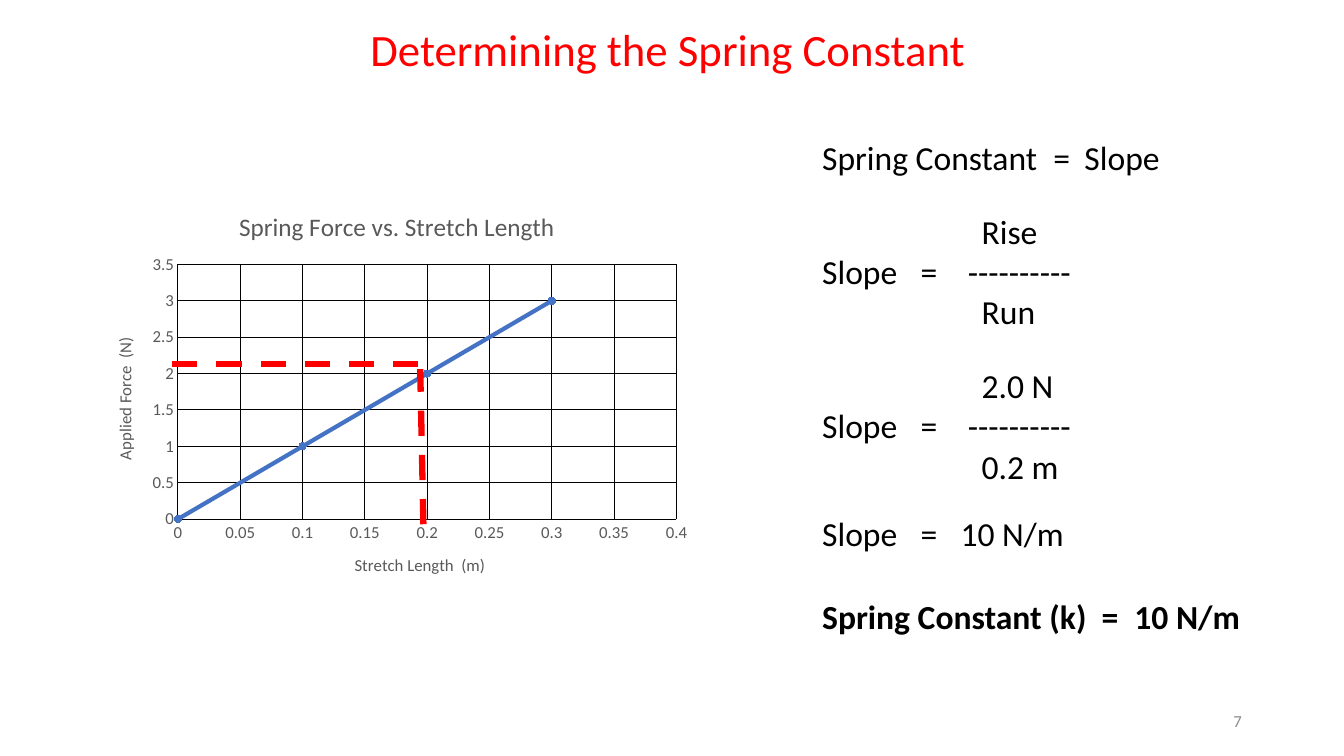
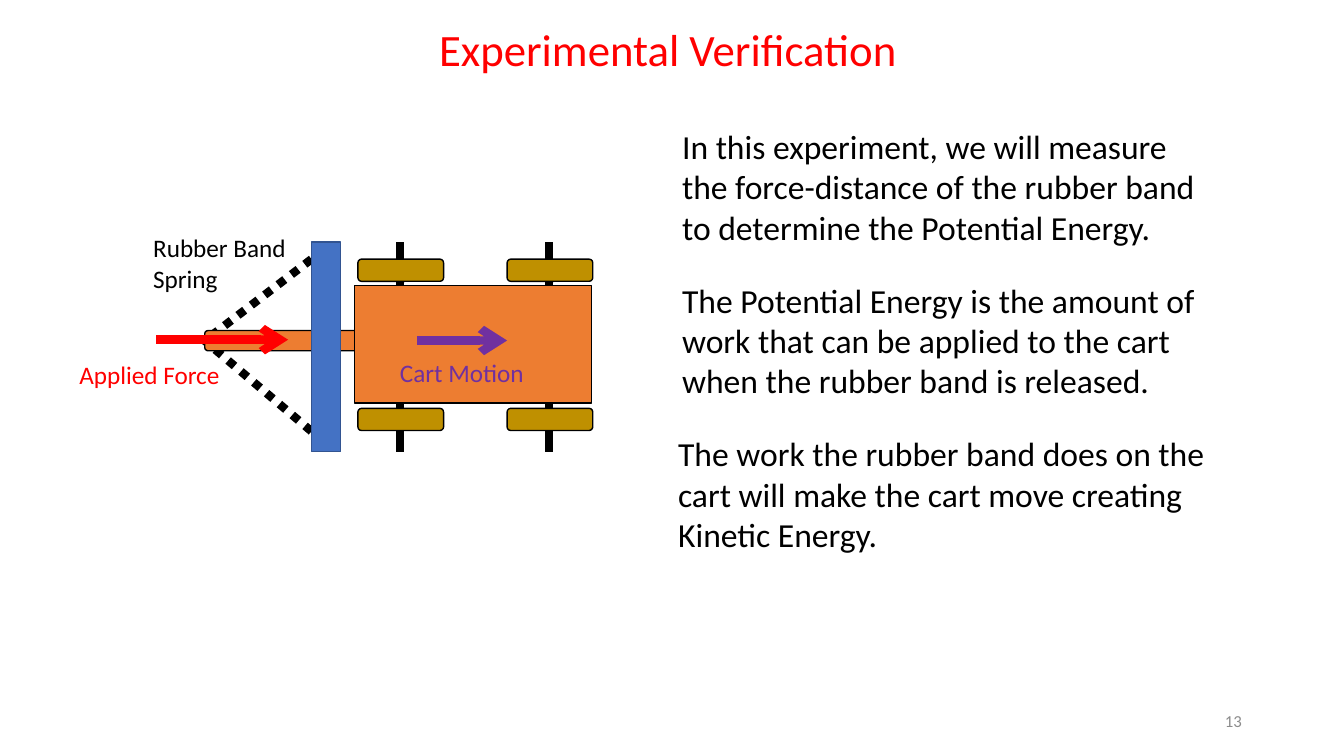
from dataclasses import dataclass

from lxml import etree
from pptx import Presentation
from pptx import util as u
from pptx.chart.data import XyChartData
from pptx.dml.color import RGBColor
from pptx.enum import chart as charts, dml, shapes, text
from pptx.oxml import ns


@dataclass(frozen=True)
class Theme:
    font: str = "Calibri"
    black: str = "000000"
    red: str = "FF0000"
    purple: str = "7030A0"
    blue: str = "4472C4"
    navy: str = "325491"
    orange: str = "ED7D31"
    gold: str = "BF9000"
    gray: str = "8C8C8C"
    axis: str = "595959"
    title: int = 32
    body: int = 24
    label: int = 18
    small: int = 12


T = Theme()


def assign(obj, values):
    for name, value in values.items():
        setattr(obj, name, value)


def style_font(font, size, color, bold=False):
    assign(font, {"name": T.font, "size": u.Pt(size), "bold": bold})
    font.color.rgb = RGBColor.from_string(color)


def style_line(line, color, width):
    line.color.rgb = RGBColor.from_string(color)
    line.width = u.Pt(width)


def style_fill(fill, color):
    fill.solid()
    fill.fore_color.rgb = RGBColor.from_string(color)


def sub(parent, tag, **attributes):
    return etree.SubElement(parent, ns.qn(tag), attributes)


class Deck:
    def __init__(self):
        self.prs = Presentation()
        assign(self.prs, {"slide_width": u.Cm(33.87), "slide_height": u.Cm(19.05)})
        self.s = None

    def slide(self, title, number):
        self.s = self.prs.slides.add_slide(self.prs.slide_layouts[6])
        self.text((8.53, 0.43, 16.61, 1.63), [title], T.title, T.red,
                  align=text.PP_ALIGN.CENTER)
        self.text((23.93, 17.65, 7.62, 1.02), [number], T.small, T.gray,
                  align=text.PP_ALIGN.RIGHT, anchor=text.MSO_ANCHOR.MIDDLE)

    def text(self, box, lines, size=T.body, color=T.black, bold=False,
             align=text.PP_ALIGN.LEFT, anchor=text.MSO_ANCHOR.TOP, tabs=(), indents=()):
        tf = self.s.shapes.add_textbox(*map(u.Cm, box)).text_frame
        assign(tf, {"word_wrap": True, "vertical_anchor": anchor,
                    "auto_size": text.MSO_AUTO_SIZE.SHAPE_TO_FIT_TEXT})
        for i, line in enumerate(lines):
            p = tf.add_paragraph() if i else tf.paragraphs[0]
            p.alignment = align
            pPr = p._p.get_or_add_pPr()
            if indents:
                pPr.set("marL", str(u.Cm(indents[i])))
            if tabs:
                stops = sub(pPr, "a:tabLst")
                for stop in tabs:
                    sub(stops, "a:tab", pos=str(u.Cm(stop)), algn="l")
            r = p.add_run()
            r.text = line
            style_font(r.font, size, color, bold)

    def fraction(self, top, upper, lower):
        self.text((20.47, top, 7.57, 3.33), [upper, "Slope\t=\t----------", lower],
                  tabs=(2.48, 3.67), indents=(4.02, 0, 4.02))

    def shape(self, kind, box, fill, line=T.black):
        sp = self.s.shapes.add_shape(kind, *map(u.Cm, box))
        sp.shadow.inherit = False
        style_fill(sp.fill, fill)
        style_line(sp.line, line, 1)
        return sp

    def line(self, start, end, color, width, dash=None, arrow=False):
        c = self.s.shapes.add_connector(shapes.MSO_CONNECTOR.STRAIGHT,
                                        *map(u.Cm, start + end))
        style_line(c.line, color, width)
        if dash:
            c.line.dash_style = dash
        if arrow:
            sub(c.line._get_or_add_ln(), "a:tailEnd", type="arrow")
        sub(c._element.spPr, "a:effectLst")
        return c

    def axis(self, axis, title, top, step):
        assign(axis, {"minimum_scale": 0, "maximum_scale": top, "major_unit": step,
                      "has_major_gridlines": True,
                      "major_tick_mark": charts.XL_TICK_MARK.NONE,
                      "minor_tick_mark": charts.XL_TICK_MARK.NONE})
        style_font(axis.tick_labels.font, T.small, T.axis)
        for line in (axis.format.line, axis.major_gridlines.format.line):
            style_line(line, T.black, 0.75)
        self.heading(axis.axis_title, title, T.small)

    def heading(self, holder, title, size):
        r = holder.text_frame.paragraphs[0].add_run()
        r.text = title
        style_font(r.font, size, T.axis)

    def scatter(self, box, title, points, x_axis, y_axis, layout):
        data = XyChartData()
        series = data.add_series("Series 1")
        for point in points:
            series.add_data_point(*point)
        chart = self.s.shapes.add_chart(charts.XL_CHART_TYPE.XY_SCATTER_LINES,
                                        *map(u.Cm, box), data).chart
        assign(chart, {"has_legend": False, "has_title": True})
        style_font(chart.font, 10, T.black)
        self.heading(chart.chart_title, title, T.label)
        self.axis(chart.category_axis, *x_axis)
        self.axis(chart.value_axis, *y_axis)
        plot = chart.plots[0]
        plot.vary_by_categories = False
        ser = plot.series[0]
        ser.smooth = False
        style_line(ser.format.line, T.blue, 3)
        assign(ser.marker, {"style": charts.XL_MARKER_STYLE.CIRCLE, "size": 5})
        style_fill(ser.marker.format.fill, T.blue)
        style_line(ser.marker.format.line, T.blue, 0.75)
        area = chart._chartSpace.chart.plotArea
        for old in area.findall(ns.qn("c:layout")):
            area.remove(old)
        frame = etree.Element(ns.qn("c:layout"))
        manual = sub(frame, "c:manualLayout")
        sub(manual, "c:layoutTarget", val="inner")
        for mode in ("xMode", "yMode"):
            sub(manual, "c:" + mode, val="edge")
        for name, value in zip("xywh", layout):
            sub(manual, "c:" + name, val=str(value))
        area.insert(0, frame)


def spring_constant(deck):
    deck.slide("Determining the Spring Constant", "7")
    deck.scatter((2.34, 4.83, 15.32, 10.19), "Spring Force vs. Stretch Length",
                 [(0, 0), (0.1, 1), (0.2, 2), (0.3, 3)],
                 ("Stretch Length  (m)", 0.4, 0.05), ("Applied Force  (N)", 3.5, 0.5),
                 (0.14, 0.18, 0.82, 0.63))
    deck.fraction(5.18, "Rise", "Run")
    deck.fraction(9.07, "2.0 N", "0.2 m")
    for top, equation, tabs, bold in (
            (3.33, "Spring Constant\t=\tSlope", (5.83, 6.61), False),
            (12.8, "Slope\t=\t10 N/m", (2.48, 3.49), False),
            (14.88, "Spring Constant (k)\t=\t10 N/m", (7.04, 7.87), True)):
        deck.text((20.47, top, 11.4, 1.27), [equation], bold=bold, tabs=tabs)
    for start, end in (((4.34, 9.17), (10.59, 9.17)), ((10.67, 13.21), (10.59, 9.3))):
        deck.line(start, end, T.red, 4.5, dml.MSO_LINE.DASH)


def verification(deck):
    rect, rounded = shapes.MSO_SHAPE.RECTANGLE, shapes.MSO_SHAPE.ROUNDED_RECTANGLE
    axles = (10.08, 13.84)
    deck.slide("Experimental Verification", "13")
    for x in axles:
        deck.line((x, 6.1), (x, 11.38), T.black, 6)
    bands = [deck.line((7.85, y), (5.16, 8.58), T.black, 6, dml.MSO_LINE.ROUND_DOT)
             for y in (6.53, 10.87)]
    rod = deck.shape(rounded, (5.16, 8.33, 4.22, 0.51), T.orange)
    for band in bands:
        band.end_connect(rod, 1)
    deck.shape(rect, (7.85, 6.1, 0.74, 5.28), T.blue, T.navy)
    deck.shape(rect, (8.94, 7.19, 5.97, 2.97), T.orange)
    for x in axles:
        for y in (6.53, 10.29):
            deck.shape(rounded, (x - 1.06, y, 2.16, 0.56), T.gold)
    deck.line((3.94, 8.56), (7.26, 8.56), T.red, 6, arrow=True)
    deck.line((10.52, 8.58), (12.78, 8.58), T.purple, 6, arrow=True)
    for x, y, label, color in ((3.61, 5.74, "Rubber Band Spring", T.black),
                               (1.75, 8.94, "Applied Force", T.red),
                               (9.83, 8.89, "Cart Motion", T.purple)):
        deck.text((x, y, 4.22, 1.02), [label], T.label, color)
    passages = (
        (16.94, "In this experiment, we will measure the force-distance of the "
                "rubber band to determine the Potential Energy."),
        (16.94, "The Potential Energy is the amount of work that can be applied "
                "to the cart when the rubber band is released."),
        (16.84, "The work the rubber band does on the cart will make the cart "
                "move creating Kinetic Energy."))
    for i, (x, passage) in enumerate(passages):
        deck.text((x, 3.05 + i * 3.87, 13.89, 3.33), [passage])


def main():
    deck = Deck()
    spring_constant(deck)
    verification(deck)
    deck.prs.save("out.pptx")


if __name__ == "__main__":
    main()
